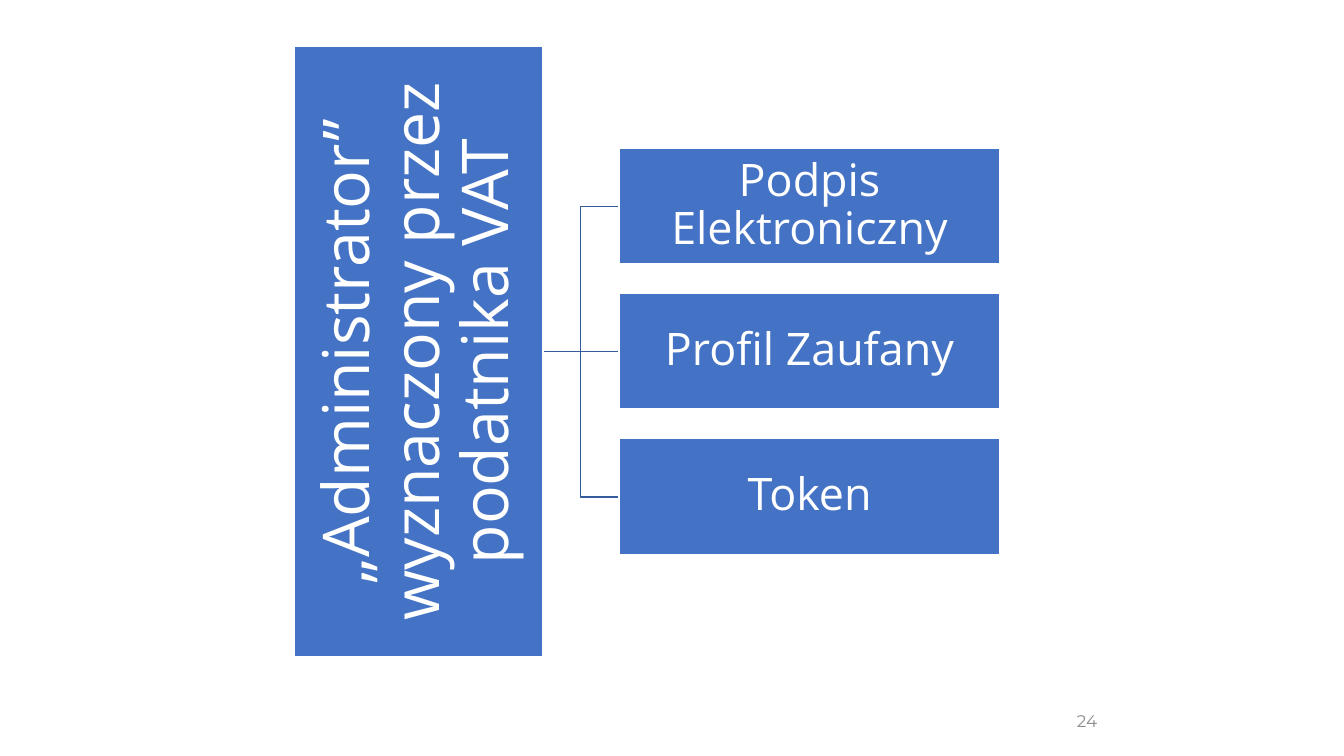
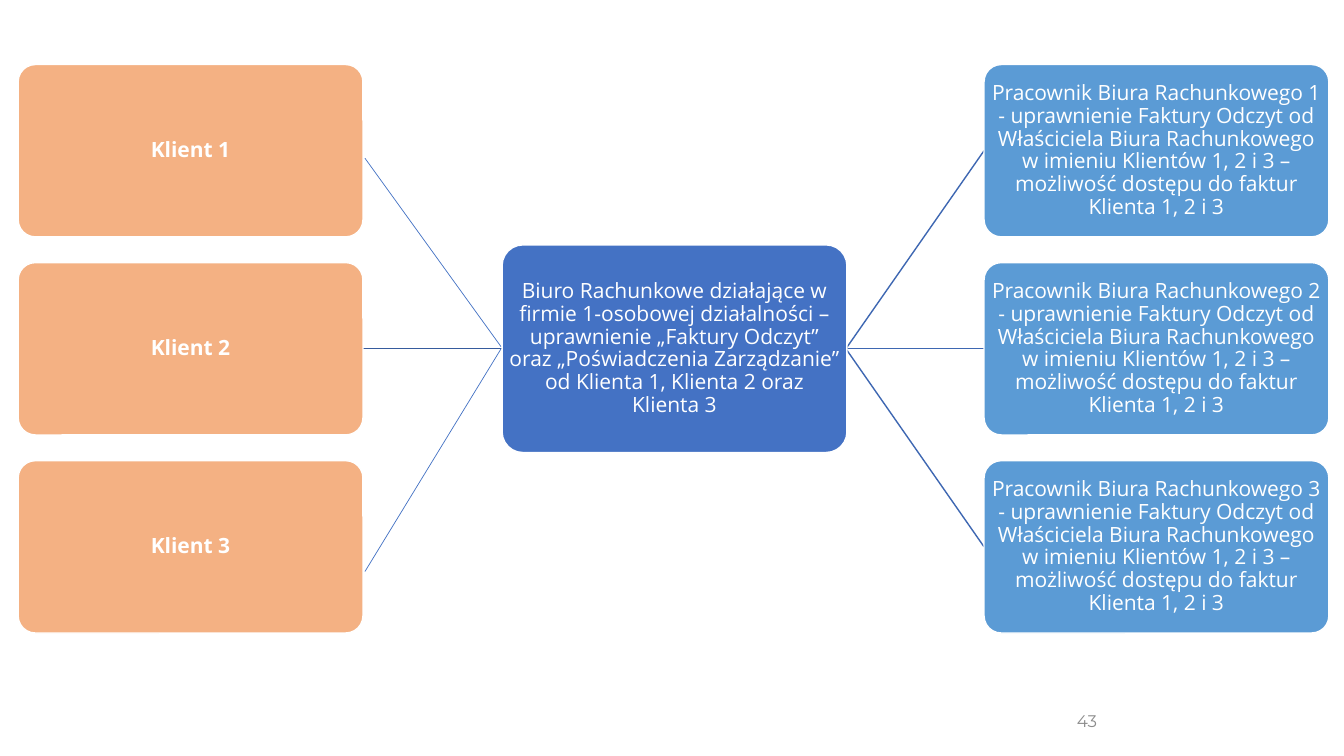
"""Build two diagram slides about access rights granted for a VAT taxpayer."""
from lxml import etree
from pptx import Presentation
from pptx.dml.color import RGBColor
from pptx.enum import shapes, text
from pptx.oxml import ns
from pptx.util import Inches, Pt

WHITE = "FFFFFF"
BLUE = "4472C4"
LIGHT_BLUE = "5B9BD5"
ORANGE = "F4B183"
GREY = "8C8C8C"
DARK_LINE = "365B9D"
MEDIUM_LINE = "3E67B2"


def paint(fill, color):
    fill.solid()
    fill.fore_color.rgb = RGBColor.from_string(color)


def write(shape, content, size, font="Open Sans", color=WHITE, bold=False,
          align=text.PP_ALIGN.CENTER, spacing=0.9, margin=0.01):
    frame = shape.text_frame
    frame.word_wrap = True
    frame.vertical_anchor = text.MSO_ANCHOR.MIDDLE
    if margin is not None:
        frame.margin_left = frame.margin_right = Inches(margin)
        frame.margin_top = frame.margin_bottom = Inches(margin)
    paragraph = frame.paragraphs[0]
    paragraph.alignment = align
    paragraph.line_spacing = spacing
    run = paragraph.add_run()
    run.text = content
    run.font.name = font
    run.font.size = Pt(size)
    run.font.bold = bold
    paint(run.font.fill, color)


presentation = Presentation()
presentation.slide_width = Inches(13.33)
presentation.slide_height = Inches(7.5)

RECTANGLE = shapes.MSO_SHAPE.RECTANGLE
ROUNDED = shapes.MSO_SHAPE.ROUNDED_RECTANGLE
STRAIGHT = shapes.MSO_CONNECTOR.STRAIGHT
ELBOW = shapes.MSO_CONNECTOR.ELBOW

administrator = "„Administrator” wyznaczony przez podatnika VAT"
methods = ["Podpis Elektroniczny", "Profil Zaufany", "Token"]
office = ("Biuro Rachunkowe działające w firmie 1-osobowej działalności – "
          "uprawnienie „Faktury Odczyt” oraz „Poświadczenia Zarządzanie” "
          "od Klienta 1, Klienta 2 oraz Klienta 3")
employee = ("Pracownik Biura Rachunkowego {} - uprawnienie Faktury Odczyt od "
            "Właściciela Biura Rachunkowego w imieniu Klientów 1, 2 i 3 – "
            "możliwość dostępu do faktur Klienta 1, 2 i 3")

method_boxes = [(RECTANGLE, 6.14, 1.47 + 1.44 * row, 3.78, 1.15, 0, BLUE,
                 method, dict(size=32, margin=0.02))
                for row, method in enumerate(methods)]
method_lines = [(kind, 5.38, 3.49, 6.14, 3.49 + 1.44 * step, DARK_LINE, 1)
                for step, kind in ((1, ELBOW), (0, STRAIGHT), (-1, ELBOW))]

client_boxes = [(ROUNDED, 0.18, 0.64 + 1.965 * row, 3.42, 1.71, 0, ORANGE,
                 f"Klient {row + 1}", dict(size=15, bold=True))
                for row in range(3)]
employee_boxes = [(ROUNDED, 9.76, 0.64 + 1.965 * row, 3.42, 1.71, 0, LIGHT_BLUE,
                   employee.format(row + 1), dict(size=15))
                  for row in range(3)]
employee_lines = [(STRAIGHT, 8.39, 3.46, 9.76, 3.46 + 1.965 * step, MEDIUM_LINE, 1)
                  for step in (-1, 0, 1)]
client_lines = [(STRAIGHT, 3.62, 1.57, 4.97, 3.44, BLUE, 0.5),
                (STRAIGHT, 3.6, 3.46, 4.98, 3.46, DARK_LINE, 1),
                (STRAIGHT, 3.62, 5.67, 4.97, 3.46, BLUE, 0.5)]

diagrams = [
    ("24", method_lines,
     [(RECTANGLE, 1.12, 2.25, 6.06, 2.47, 270, BLUE, administrator,
       dict(size=46, margin=0.03))] + method_boxes),
    ("43", client_lines + employee_lines,
     client_boxes
     + [(ROUNDED, 4.98, 2.43, 3.42, 2.06, 0, BLUE, office, dict(size=15))]
     + employee_boxes),
]

for number, lines, boxes in diagrams:
    slide = presentation.slides.add_slide(presentation.slide_layouts[6])

    for kind, x1, y1, x2, y2, color, width in lines:
        connector = slide.shapes.add_connector(
            kind, Inches(x1), Inches(y1), Inches(x2), Inches(y2))
        paint(connector.line.fill, color)
        connector.line.width = Pt(width)
        etree.SubElement(connector._element.spPr, ns.qn("a:effectLst"))

    for kind, left, top, width, height, rotation, color, content, style in boxes:
        box = slide.shapes.add_shape(
            kind, Inches(left), Inches(top), Inches(width), Inches(height))
        box.shadow.inherit = False
        box.rotation = rotation
        if kind == ROUNDED:
            box.adjustments[0] = 0.1
        paint(box.fill, color)
        paint(box.line.fill, WHITE)
        box.line.width = Pt(1)
        write(box, content, **style)

    page_number = slide.shapes.add_textbox(
        Inches(8.73), Inches(6.95), Inches(2.25), Inches(0.4))
    write(page_number, number, size=12, font="Montserrat", color=GREY,
          align=text.PP_ALIGN.RIGHT, spacing=1.0, margin=None)

presentation.save("out.pptx")
